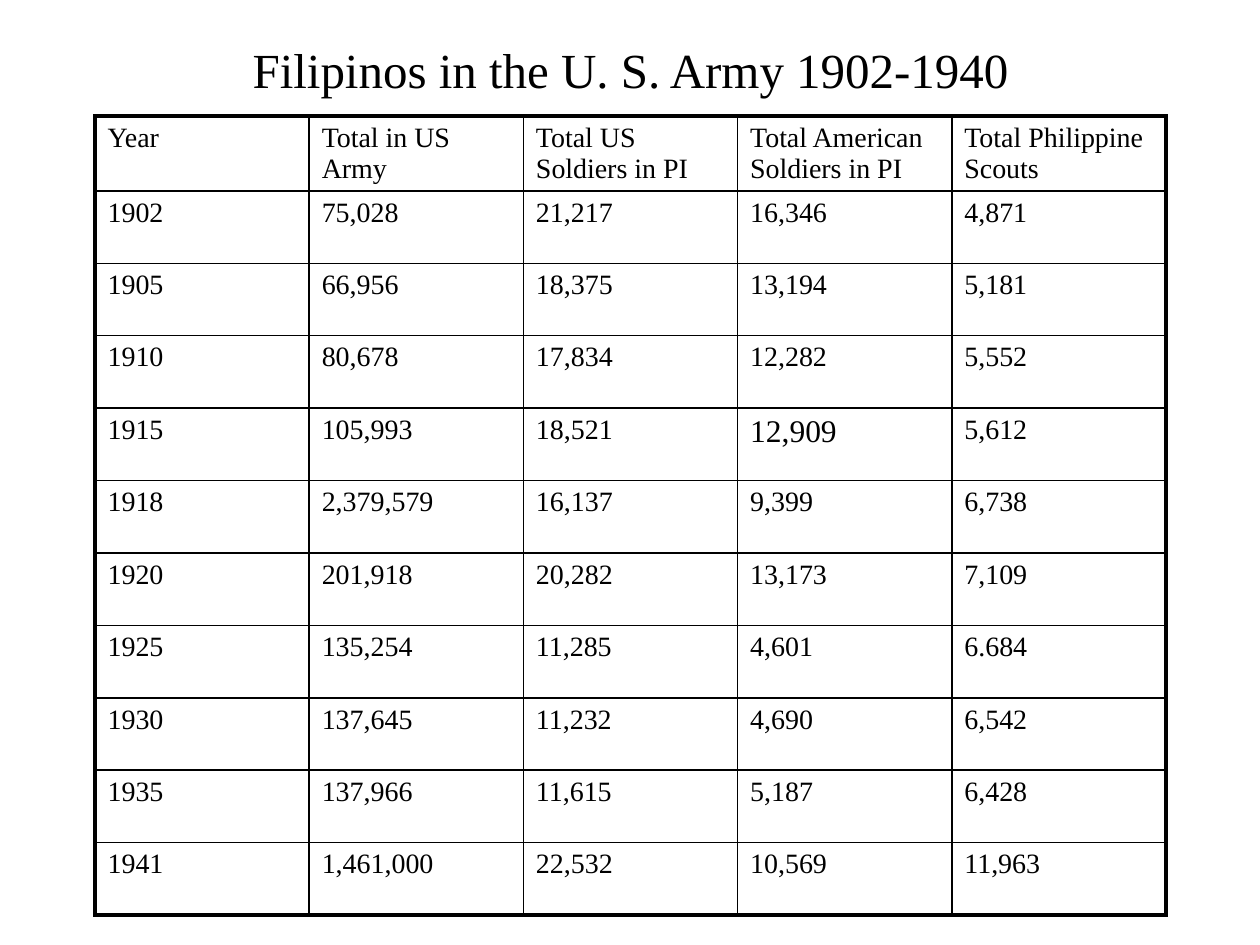
from lxml.etree import SubElement
from pptx import Presentation
from pptx.dml.color import RGBColor
from pptx.enum.text import MSO_ANCHOR, PP_ALIGN
from pptx.oxml.ns import qn
from pptx.util import Emu, Pt

COLORS = {"ink": "000000", "page": "FFFFFF"}
HEADERS = ["Year", "Total in US Army", "Total US Soldiers in PI",
           "Total American Soldiers in PI", "Total Philippine Scouts"]
TROOPS = [
    ["1902", "75,028", "21,217", "16,346", "4,871"],
    ["1905", "66,956", "18,375", "13,194", "5,181"],
    ["1910", "80,678", "17,834", "12,282", "5,552"],
    ["1915", "105,993", "18,521", "12,909", "5,612"],
    ["1918", "2,379,579", "16,137", "9,399", "6,738"],
    ["1920", "201,918", "20,282", "13,173", "7,109"],
    ["1925", "135,254", "11,285", "4,601", "6.684"],
    ["1930", "137,645", "11,232", "4,690", "6,542"],
    ["1935", "137,966", "11,615", "5,187", "6,428"],
    ["1941", "1,461,000", "22,532", "10,569", "11,963"],
]


def px(length):
    return Emu(round(length * 914400 / 126))


class SlideBuilder:
    font_name = "Times New Roman"
    title_size = 28
    cell_size = 16
    inner_line = 1
    outer_line = 2.25

    def __init__(self, deck):
        self.page = deck.slides.add_slide(deck.slide_layouts[5])
        fill = self.page.background.fill
        fill.solid()
        fill.fore_color.rgb = RGBColor.from_string(COLORS["page"])

    def style(self, para, size):
        para.font.name = self.font_name
        para.font.size = Pt(size)
        para.font.color.rgb = RGBColor.from_string(COLORS["ink"])

    def title(self, text, left, top, width, height):
        box = self.page.shapes.title
        box.left, box.top = px(left), px(top)
        box.width, box.height = px(width), px(height)
        frame = box.text_frame
        frame.text = text
        frame.vertical_anchor = MSO_ANCHOR.MIDDLE
        para = frame.paragraphs[0]
        para.alignment = PP_ALIGN.CENTER
        self.style(para, self.title_size)

    def border(self, cell, side, weight):
        properties = cell._tc.get_or_add_tcPr()
        line = SubElement(properties, qn(f"a:ln{side}"), w=str(Pt(weight)))
        fill = SubElement(line, qn("a:solidFill"))
        SubElement(fill, qn("a:srgbClr"), val=COLORS["ink"])

    def table(self, rows, left, top, width, height, large_cells):
        last_row, last_column = len(rows) - 1, len(rows[0]) - 1
        table = self.page.shapes.add_table(
            len(rows), len(rows[0]), px(left), px(top), px(width), px(height)).table
        table.first_row = table.horz_banding = False
        for row, values in enumerate(rows):
            for column, text in enumerate(values):
                cell = table.cell(row, column)
                cell.text = text
                size = large_cells.get((row, column), self.cell_size)
                self.style(cell.text_frame.paragraphs[0], size)
                edges = {"L": column == 0, "R": column == last_column,
                         "T": row == 0, "B": row == last_row}
                for side, is_outer in edges.items():
                    self.border(cell, side, self.outer_line if is_outer else self.inner_line)
                cell.fill.background()


def main():
    deck = Presentation()
    deck.slide_width, deck.slide_height = px(1260), px(945)
    builder = SlideBuilder(deck)
    builder.title("Filipinos in the U. S. Army 1902-1940", 32, 32, 1197, 73)
    builder.table([HEADERS] + TROOPS, 95, 116, 1071, 797, {(4, 3): 18})
    deck.save("out.pptx")


if __name__ == "__main__":
    main()
